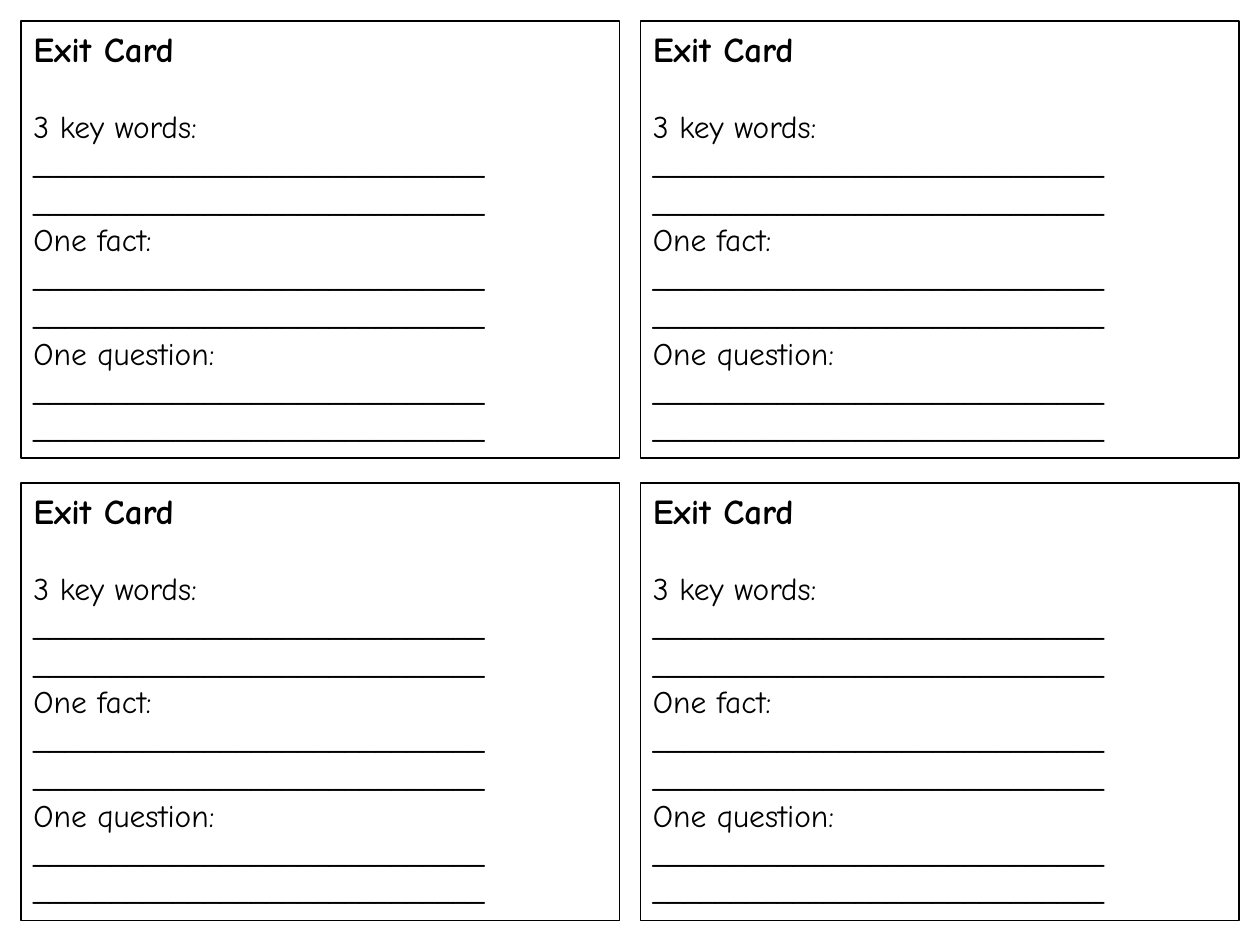
from dataclasses import dataclass
from itertools import product

from pptx import Presentation
from pptx.dml.color import RGBColor
from pptx.enum.shapes import MSO_SHAPE
from pptx.enum.text import MSO_ANCHOR, MSO_AUTO_SIZE, PP_ALIGN
from pptx.util import Pt

RECTANGLE = MSO_SHAPE.RECTANGLE
TOP = MSO_ANCHOR.TOP
LEFT = PP_ALIGN.LEFT
GROW = MSO_AUTO_SIZE.SHAPE_TO_FIT_TEXT


@dataclass(frozen=True)
class Theme:
    font: str = "Comic Neue"
    ink: RGBColor = RGBColor(0, 0, 0)
    heading_size: Pt = Pt(20)
    prompt_size: Pt = Pt(18)
    heading_gap: Pt = Pt(21.6)
    border: Pt = Pt(0.75)


THEME = Theme()

# Card wording: every prompt is followed by two ruled answer lines
HEADING = "Exit Card"
PROMPTS = ("3 key words:", "One fact:", "One question:")
ANSWER_LINE = "_" * 29

# Two-by-two grid of cards
CARD_WIDTH, CARD_HEIGHT = Pt(342), Pt(249.84)
CARD_LEFTS = (Pt(12), Pt(366))
CARD_TOPS = (Pt(12), Pt(276))


def add_exit_card(slide, left, top, width, height):
    card = slide.shapes.add_shape(RECTANGLE, left, top, width, height)
    card.shadow.inherit = False
    card.fill.background()
    card.line.color.rgb = THEME.ink
    card.line.width = THEME.border

    # Wording
    lines = [HEADING]
    for prompt in PROMPTS:
        lines += [f"{prompt} {ANSWER_LINE}", ANSWER_LINE]
    frame = card.text_frame
    frame.text = "\n".join(lines)
    frame.word_wrap = True
    frame.vertical_anchor = TOP
    frame.auto_size = GROW

    # Type
    for index, paragraph in enumerate(frame.paragraphs):
        is_heading = index == 0
        paragraph.alignment = LEFT
        font = paragraph.runs[0].font
        font.name = THEME.font
        font.color.rgb = THEME.ink
        font.bold = is_heading
        font.size = THEME.heading_size if is_heading else THEME.prompt_size
    frame.paragraphs[0].space_after = THEME.heading_gap


def main():
    deck = Presentation()
    deck.slide_width, deck.slide_height = Pt(720), Pt(540)
    blank_layout = deck.slide_layouts[6]
    slide = deck.slides.add_slide(blank_layout)
    for left, top in product(CARD_LEFTS, CARD_TOPS):
        add_exit_card(slide, left, top, CARD_WIDTH, CARD_HEIGHT)
    deck.save("out.pptx")


if __name__ == "__main__":
    main()
